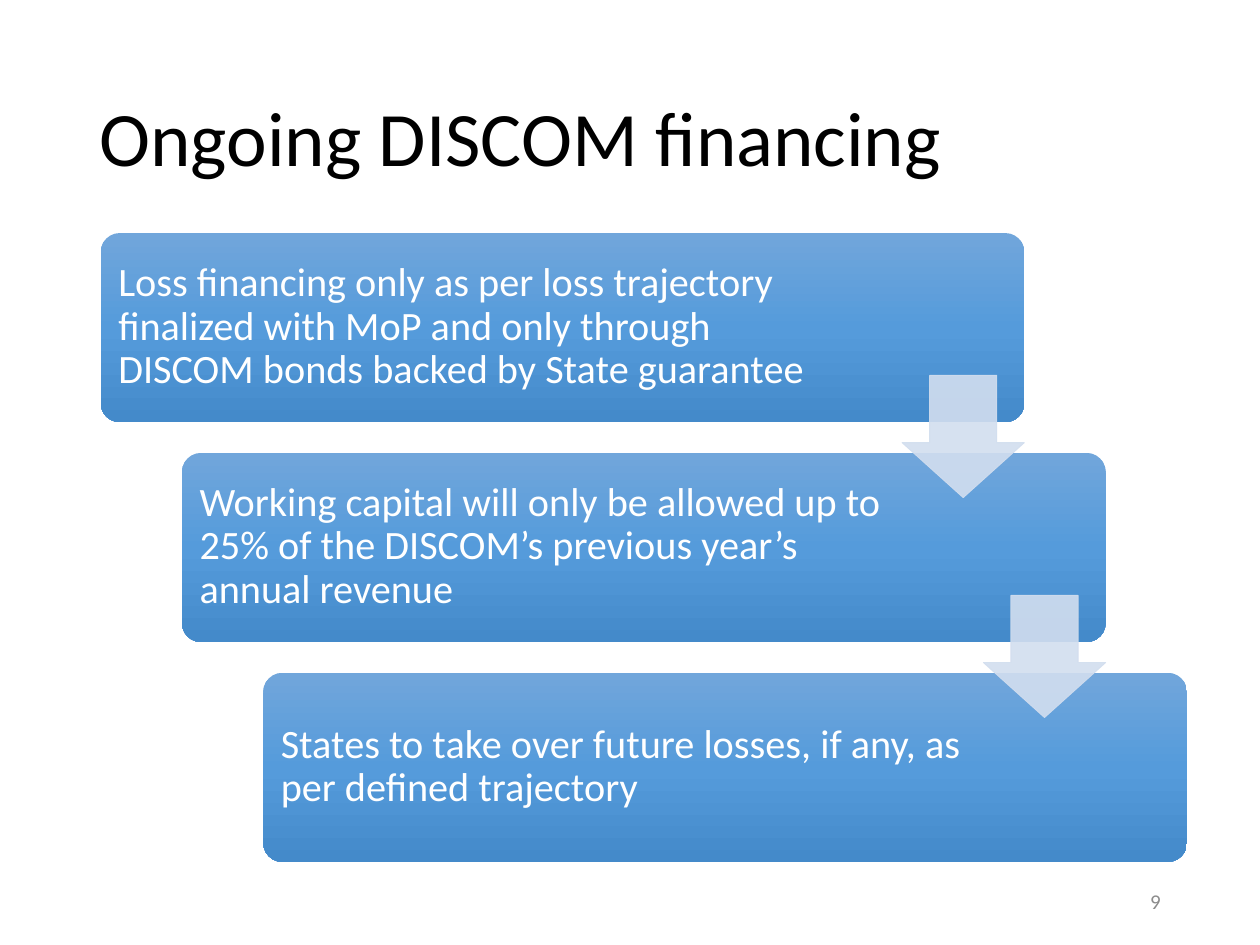
from copy import deepcopy

from lxml.etree import SubElement
from pptx import Presentation
from pptx.dml.color import RGBColor
from pptx.enum.shapes import MSO_SHAPE
from pptx.enum.text import MSO_ANCHOR, PP_ALIGN
from pptx.oxml.ns import qn
from pptx.util import Inches, Pt

BLACK = RGBColor(0x00, 0x00, 0x00)
WHITE = RGBColor(0xFF, 0xFF, 0xFF)
GRAY = RGBColor(0x8C, 0x8C, 0x8C)
PALE_BLUE = RGBColor(0xD2, 0xDE, 0xEF)
CARD_BLUES = (
    RGBColor(0x71, 0xA6, 0xDB),
    RGBColor(0x55, 0x9B, 0xDB),
    RGBColor(0x44, 0x8A, 0xCA),
)

FONT = "Calibri"
CARD_LEFT, CARD_TOP = 0.8, 1.85
CARD_WIDTH, CARD_HEIGHT = 7.33, 1.5
STEP_X, STEP_Y = 0.645, 1.745
ARROW_LEFT, ARROW_TOP, ARROW_SIZE = 7.16, 2.98, 0.97
STEPS = (
    ("Loss financing only as per loss trajectory finalized with MoP and only "
     "through DISCOM bonds backed by State guarantee", 5.72),
    ("Working capital will only be allowed up to 25% of the DISCOM’s "
     "previous year’s annual revenue", 5.62),
    ("States to take over future losses, if any, as per defined trajectory", 5.62),
)


def add_label(slide, text, left, top, width, height, size, color,
              align=PP_ALIGN.LEFT, spacing=0.9, inset=0.05):
    label = slide.shapes.add_textbox(
        Inches(left), Inches(top), Inches(width), Inches(height))
    frame = label.text_frame
    frame.word_wrap = True
    frame.vertical_anchor = MSO_ANCHOR.MIDDLE
    frame.margin_left = frame.margin_right = Inches(0.1)
    frame.margin_top = frame.margin_bottom = Inches(inset)
    frame.text = text
    paragraph = frame.paragraphs[0]
    paragraph.alignment = align
    paragraph.line_spacing = spacing
    font = paragraph.runs[0].font
    font.name = FONT
    font.size = Pt(size)
    font.color.rgb = color


def fill_with_gradient(shape, colors):
    fill = shape.fill
    fill.gradient()
    fill.gradient_angle = 270
    stop_list = shape._element.spPr.find(".//" + qn("a:gsLst"))
    stop_list.insert(1, deepcopy(stop_list[0]))
    for index, (stop, color) in enumerate(zip(fill.gradient_stops, colors)):
        stop.position = index / (len(colors) - 1)
        stop.color.rgb = color


def add_card(slide, text, text_width, left, top):
    card = slide.shapes.add_shape(
        MSO_SHAPE.ROUNDED_RECTANGLE,
        Inches(left), Inches(top), Inches(CARD_WIDTH), Inches(CARD_HEIGHT))
    card.adjustments[0] = 0.1
    card.shadow.inherit = False
    card.line.fill.background()
    fill_with_gradient(card, CARD_BLUES)
    add_label(slide, text, left + 0.04, top + 0.04, text_width, 1.41,
              23, WHITE, inset=0.1)


def add_arrow(slide, left, top):
    arrow = slide.shapes.add_shape(
        MSO_SHAPE.DOWN_ARROW,
        Inches(left), Inches(top), Inches(ARROW_SIZE), Inches(ARROW_SIZE))
    arrow.adjustments[0] = 0.55
    arrow.adjustments[1] = 0.45
    arrow.shadow.inherit = False
    arrow.line.width = Pt(0.5)
    for fill in (arrow.fill, arrow.line.fill):
        fill.solid()
        fill.fore_color.rgb = PALE_BLUE
    for color in arrow._element.spPr.iter(qn("a:srgbClr")):
        SubElement(color, qn("a:alpha"), val="90000")


def main():
    presentation = Presentation()
    presentation.slide_width = Inches(10)
    presentation.slide_height = Inches(7.5)
    slide = presentation.slides.add_slide(presentation.slide_layouts[6])

    add_label(slide, "Ongoing DISCOM financing", 0.69, 0.4, 8.62, 1.45, 44, BLACK)
    for index, (text, text_width) in enumerate(STEPS):
        add_card(slide, text, text_width,
                 CARD_LEFT + index * STEP_X, CARD_TOP + index * STEP_Y)
    for index in range(len(STEPS) - 1):
        add_arrow(slide, ARROW_LEFT + index * STEP_X, ARROW_TOP + index * STEP_Y)
    add_label(slide, "9", 7.06, 6.95, 2.25, 0.4, 12, GRAY,
              align=PP_ALIGN.RIGHT, spacing=1.0)

    presentation.save("out.pptx")


if __name__ == "__main__":
    main()
